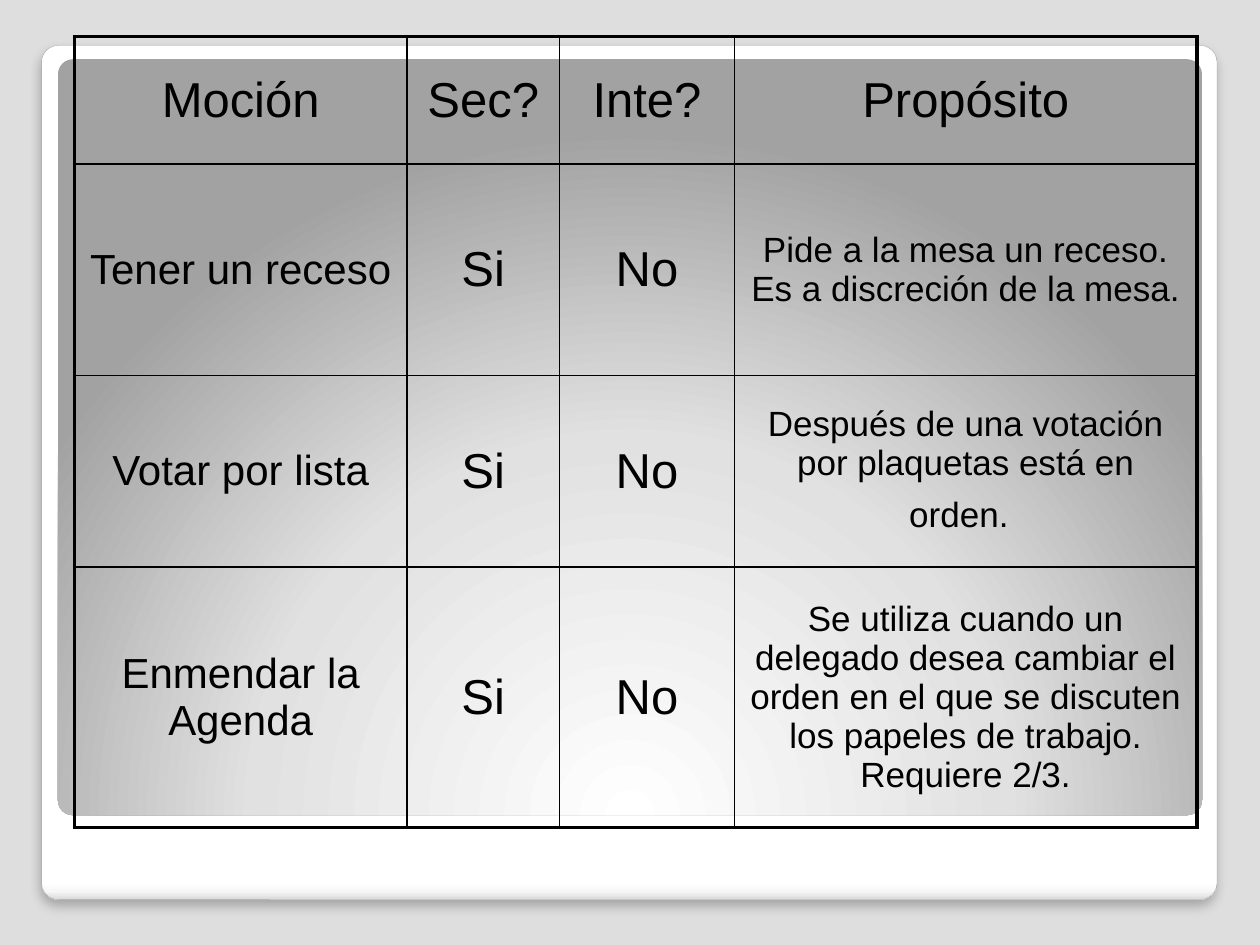
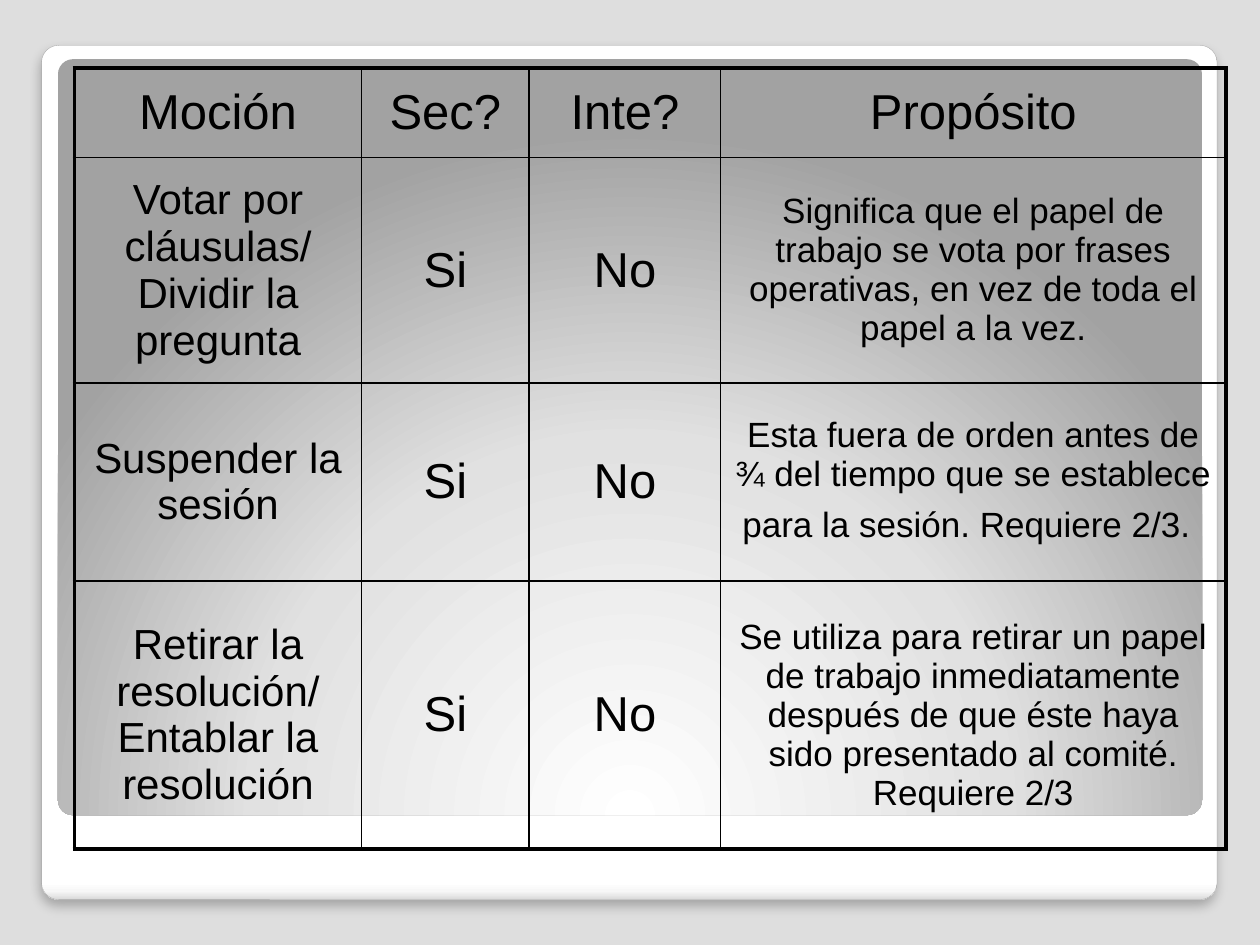
"""Build two slides that tabulate the motions of a debate."""
from dataclasses import dataclass

import lxml.etree
import pptx
import pptx.dml.color
import pptx.enum.shapes
import pptx.enum.text
import pptx.oxml
import pptx.oxml.ns
import pptx.util

Inches = pptx.util.Inches
Pt = pptx.util.Pt
RGB = pptx.dml.color.RGBColor.from_string
qn = pptx.oxml.ns.qn
NS = pptx.oxml.ns.nsdecls("a")


@dataclass(frozen=True)
class Theme:
    font: str = "Arial"
    text: str = "000000"
    background: str = "DEDEDE"
    card_line: str = "A4A4A4"
    card_stops: tuple = ((0, "FFFFFF"), (98, "FFFFFF"), (99, "F7F7F7"), (100, "DADADA"))
    glow_stops: tuple = ((0, "FFFFFF"), (55, "E1E1E1"), (100, "A2A2A2"))
    header_size: int = 28
    column_sizes: tuple = (24, 28, 28, 20)
    outer_line: float = 2.25
    inner_line: float = 1


@dataclass(frozen=True)
class Panel:
    left: float
    top: float
    width: float
    height: float
    stops: tuple
    direction: str
    line: str = ""
    shadow: bool = False


@dataclass(frozen=True)
class Motion:
    name: str
    purpose: str
    tall_end: bool = False


@dataclass(frozen=True)
class MotionTable:
    top: float
    columns: tuple
    rows: tuple
    motions: tuple


THEME = Theme()
HEADER = ("Moción", "Sec?", "Inte?", "Propósito")
TABLE_LEFT = 0.59
PANELS = (
    Panel(0.33, 0.36, 9.33, 6.78, THEME.card_stops,
          '<a:lin ang="5400000" scaled="0"/>', THEME.card_line, True),
    Panel(0.46, 0.47, 9.08, 6, THEME.glow_stops,
          '<a:path path="circle"><a:fillToRect l="50000" t="175000" '
          'r="50000" b="-75000"/></a:path>'),
)
TABLES = (
    MotionTable(0.29, (2.64, 1.21, 1.39, 3.67), (1.01, 1.68, 1.52, 2.07), (
        Motion("Tener un receso",
               "Pide a la mesa un receso. Es a discreción de la mesa."),
        Motion("Votar por lista",
               "Después de una votación por plaquetas está en orden.", True),
        Motion("Enmendar la Agenda",
               "Se utiliza cuando un delegado desea cambiar el orden en el que se "
               "discuten los papeles de trabajo. Requiere 2/3."),
    )),
    MotionTable(0.54, (2.28, 1.33, 1.52, 4.01), (0.71, 1.79, 1.57, 2.13), (
        Motion("Votar por cláusulas/ Dividir la pregunta",
               "Significa que el papel de trabajo se vota por frases operativas, "
               "en vez de toda el papel a la vez."),
        Motion("Suspender la sesión",
               "Esta fuera de orden antes de ¾ del tiempo que se establece para "
               "la sesión. Requiere 2/3.", True),
        Motion("Retirar la resolución/ Entablar la resolución",
               "Se utiliza para retirar un papel de trabajo inmediatamente después "
               "de que éste haya sido presentado al comité. Requiere 2/3"),
    )),
)


def add_panel(slide, panel: Panel) -> None:
    sp = slide.shapes.add_shape(
        pptx.enum.shapes.MSO_SHAPE.ROUNDED_RECTANGLE,
        Inches(panel.left), Inches(panel.top), Inches(panel.width), Inches(panel.height))
    sp.adjustments[0] = 0.02
    sp.shadow.inherit = False
    stops = "".join(f'<a:gs pos="{pos * 1000}"><a:srgbClr val="{color}"/></a:gs>'
                    for pos, color in panel.stops)
    sp_pr = sp.element.spPr
    sp_pr.find(qn("a:prstGeom")).addnext(pptx.oxml.parse_xml(
        f'<a:gradFill {NS} rotWithShape="1"><a:gsLst>{stops}</a:gsLst>'
        f'{panel.direction}</a:gradFill>'))
    if panel.line:
        sp.line.color.rgb = RGB(panel.line)
        sp.line.width = Pt(0.16)
    else:
        sp.line.fill.background()
    if panel.shadow:
        sp_pr.find(qn("a:effectLst")).append(pptx.oxml.parse_xml(
            f'<a:outerShdw {NS} blurRad="{Pt(6)}" dist="{Pt(4)}" dir="5400000" '
            f'algn="ctr" rotWithShape="0"><a:srgbClr val="{THEME.text}">'
            '<a:alpha val="25000"/></a:srgbClr></a:outerShdw>'))


def add_run(p, text: str, *, size: int) -> None:
    r = p.add_run()
    r.text = text
    r.font.size = Pt(size)
    r.font.name = THEME.font
    r.font.color.rgb = RGB(THEME.text)


def write_cell(cell, text: str, *, size: int, tall_end: bool = False) -> None:
    cell.fill.background()
    cell.vertical_anchor = pptx.enum.text.MSO_ANCHOR.MIDDLE
    p = cell.text_frame.paragraphs[0]
    p.alignment = pptx.enum.text.PP_ALIGN.CENTER
    before = lxml.etree.SubElement(p._p.get_or_add_pPr(), qn("a:spcBef"))
    lxml.etree.SubElement(before, qn("a:spcPct")).set("val", "20000")
    add_run(p, text, size=size)
    if tall_end:
        add_run(p, " ", size=THEME.header_size)


def set_borders(cell, outer_sides: dict[str, bool]) -> None:
    tc_pr = cell._tc.get_or_add_tcPr()
    for i, (side, outer) in enumerate(outer_sides.items()):
        width = Pt(THEME.outer_line if outer else THEME.inner_line)
        tc_pr.insert(i, pptx.oxml.parse_xml(
            f'<a:ln{side} {NS} w="{width}"><a:solidFill>'
            f'<a:srgbClr val="{THEME.text}"/></a:solidFill></a:ln{side}>'))


def add_motion_table(slide, spec: MotionTable) -> None:
    n_rows, n_cols = len(spec.rows), len(spec.columns)
    table = slide.shapes.add_table(
        n_rows, n_cols, Inches(TABLE_LEFT), Inches(spec.top),
        Inches(sum(spec.columns)), Inches(sum(spec.rows))).table
    table.first_row = table.horz_banding = False
    for column, width in zip(table.columns, spec.columns):
        column.width = Inches(width)
    for row, height in zip(table.rows, spec.rows):
        row.height = Inches(height)
    for j, title in enumerate(HEADER):
        write_cell(table.cell(0, j), title, size=THEME.header_size)
    for i, motion in enumerate(spec.motions, start=1):
        texts = (motion.name, "Si", "No", motion.purpose)
        for j, (text, size) in enumerate(zip(texts, THEME.column_sizes)):
            write_cell(table.cell(i, j), text, size=size,
                       tall_end=motion.tall_end and j == n_cols - 1)
    for i in range(n_rows):
        for j in range(n_cols):
            set_borders(table.cell(i, j), {"L": j == 0, "R": j == n_cols - 1,
                                           "T": i == 0, "B": i == n_rows - 1})


def main() -> None:
    prs = pptx.Presentation()
    prs.slide_width, prs.slide_height = Inches(10), Inches(7.5)
    fill = prs.slide_master.background.fill
    fill.solid()
    fill.fore_color.rgb = RGB(THEME.background)
    for motion_table in TABLES:
        slide = prs.slides.add_slide(prs.slide_layouts[6])
        for panel in PANELS:
            add_panel(slide, panel)
        add_motion_table(slide, motion_table)
    prs.save("out.pptx")


if __name__ == "__main__":
    main()
